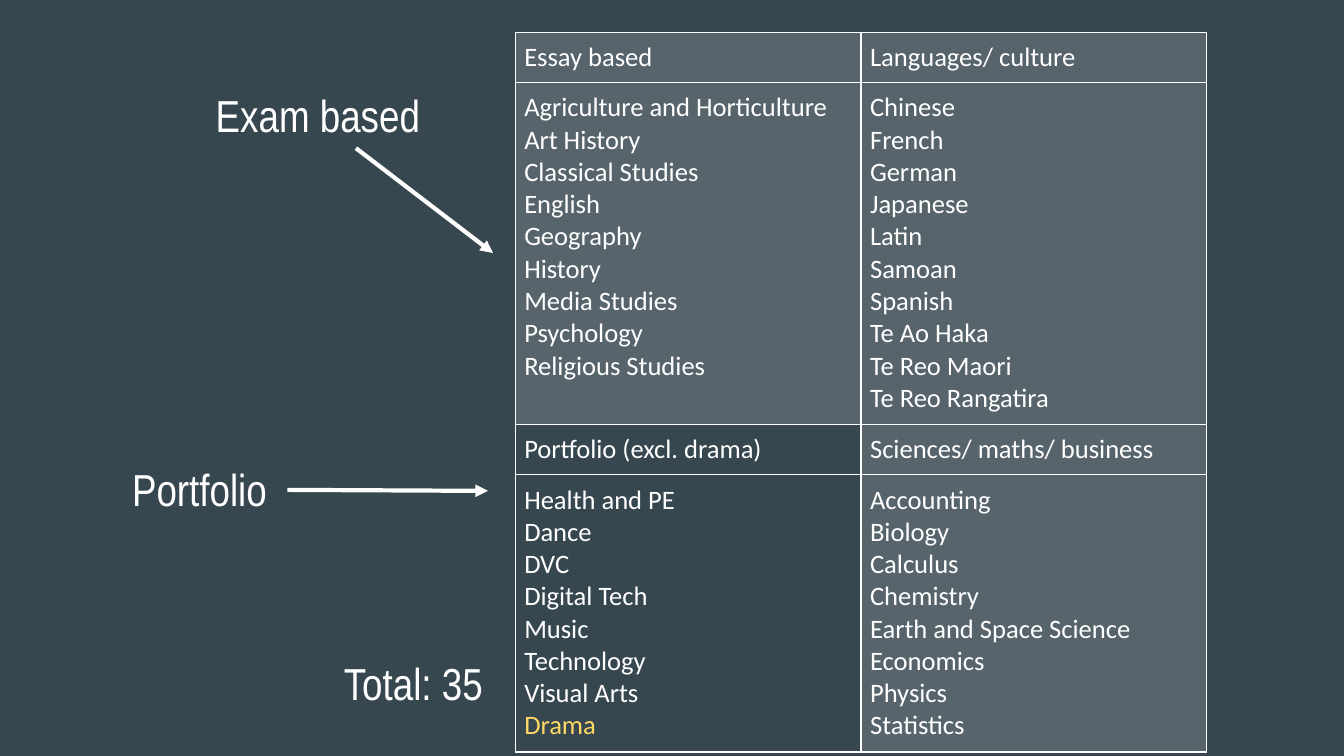
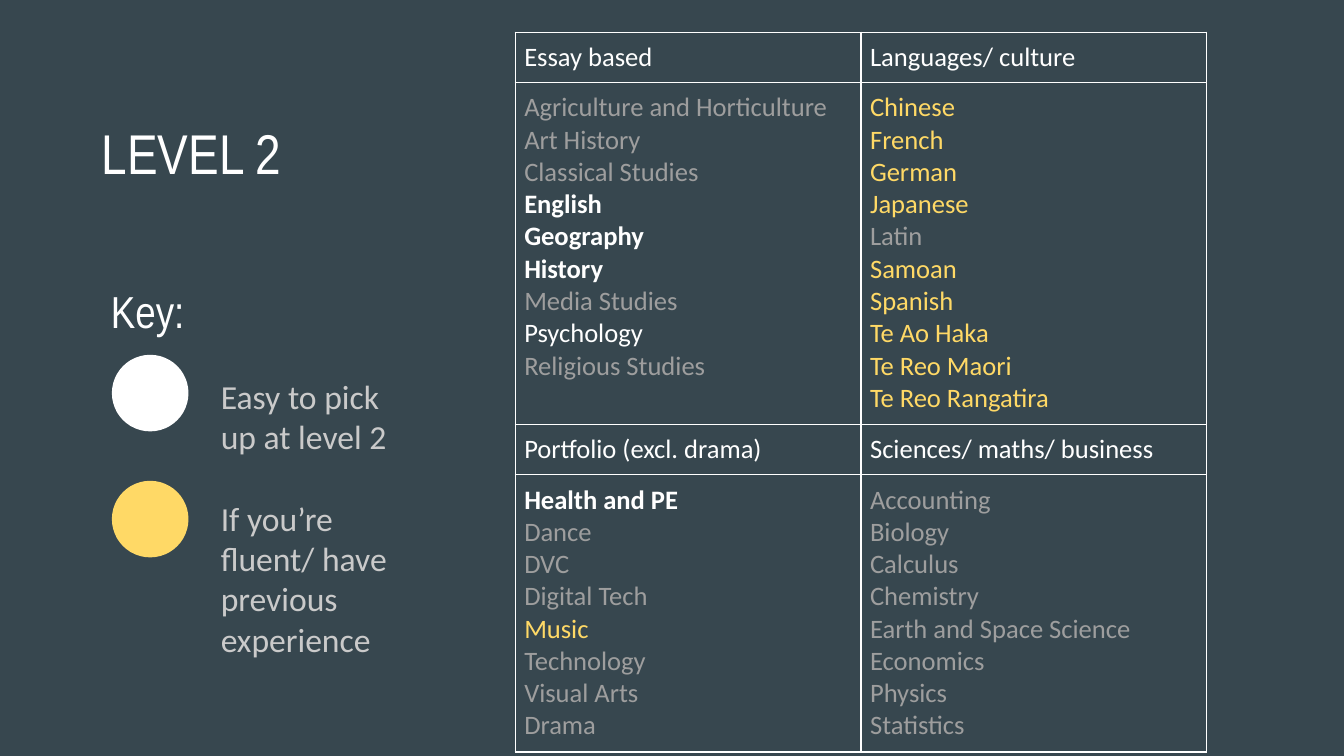
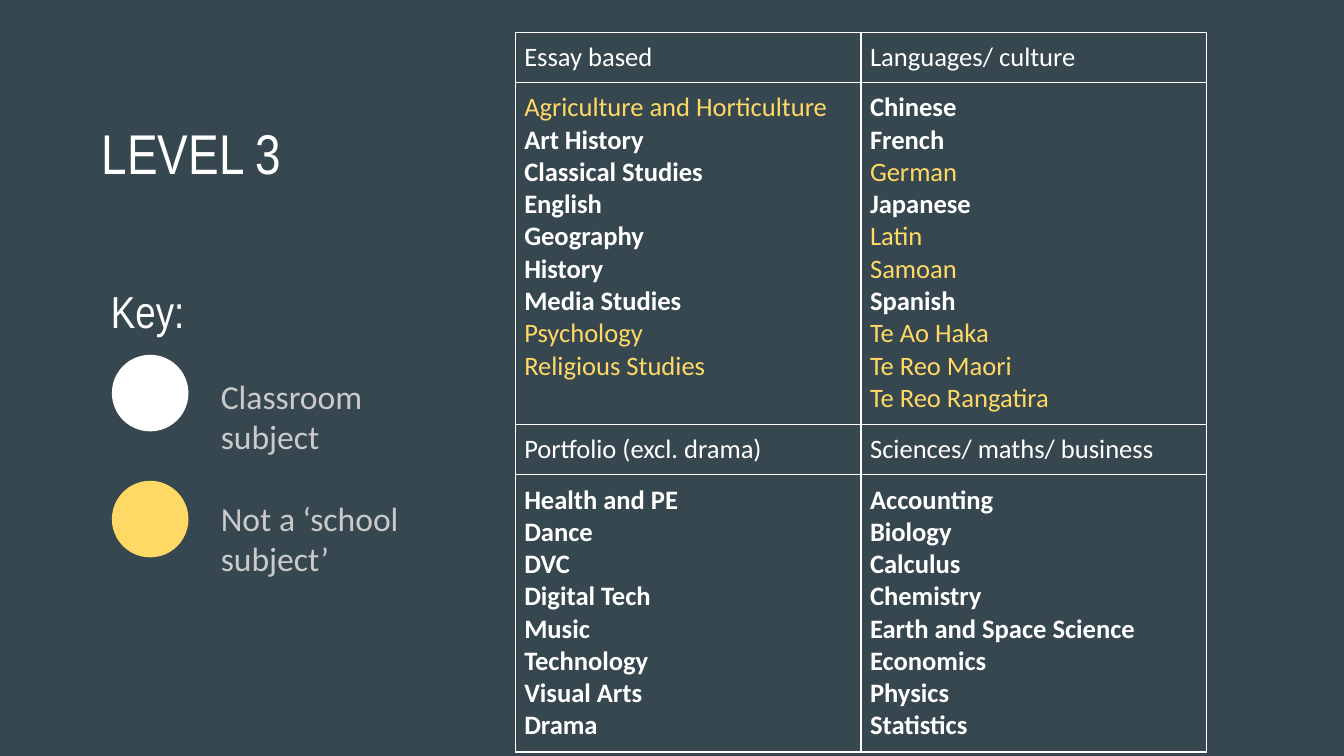
"""Build three slides that sort school subjects by type and level."""
from dataclasses import dataclass, field

from lxml.etree import SubElement
from pptx import Presentation
from pptx.dml.color import RGBColor
from pptx.enum.shapes import MSO_CONNECTOR, MSO_SHAPE
from pptx.oxml.ns import qn
from pptx.util import Inches, Pt

COLORS = {
    "slate": "37474F",
    "white": "FFFFFF",
    "gold": "FFD966",
    "muted": "9E9E9E",
    "caption": "CACACA",
}
HEADING_FONT, BODY_FONT = "Arial Narrow", "Calibri"
HEADING_SIZE, LEVEL_SIZE, SUBJECT_SIZE, KEY_SIZE = 32, 40, 19, 24
KEY_GAP = 29.3
TEXT_INSET, CELL_INSET = 0.13, 0.09
TABLE_LEFT, TABLE_TOP, COLUMN_WIDTH = 5.11, 0.32, 3.43
ROW_HEIGHTS = (0.5, 3.39, 0.5, 2.75)
SHADE_ALPHA = 16
DOT_LEFT, DOT_TOP, DOT_SIZE, DOT_PITCH = 1.11, 3.52, 0.76, 1.25


@dataclass(frozen=True)
class Tone:
    color: str
    bold: bool = False


@dataclass(frozen=True)
class Category:
    row: int
    column: int
    heading: str
    subjects: tuple[str, ...]


@dataclass(frozen=True)
class Heading:
    text: str
    left: float
    top: float
    width: float
    size: int = HEADING_SIZE


@dataclass(frozen=True)
class Arrow:
    start: tuple[float, float]
    end: tuple[float, float]


@dataclass(frozen=True)
class SubjectSlide:
    base: Tone
    headings: tuple[Heading, ...]
    tones: dict[str, Tone] = field(default_factory=dict)
    shaded: tuple[str, ...] = ()
    arrows: tuple[Arrow, ...] = ()
    key: tuple[str, ...] = ()


PLAIN, STRONG = Tone("white"), Tone("white", True)
GOLD, MUTED = Tone("gold"), Tone("muted")

CATEGORIES = (
    Category(0, 0, "Essay based", (
        "Agriculture and Horticulture", "Art History", "Classical Studies",
        "English", "Geography", "History", "Media Studies", "Psychology",
        "Religious Studies")),
    Category(0, 1, "Languages/ culture", (
        "Chinese", "French", "German", "Japanese", "Latin", "Samoan",
        "Spanish", "Te Ao Haka", "Te Reo Maori", "Te Reo Rangatira")),
    Category(2, 0, "Portfolio (excl. drama)", (
        "Health and PE", "Dance", "DVC", "Digital Tech", "Music",
        "Technology", "Visual Arts", "Drama")),
    Category(2, 1, "Sciences/ maths/ business", (
        "Accounting", "Biology", "Calculus", "Chemistry",
        "Earth and Space Science", "Economics", "Physics", "Statistics")),
)


def level_headings(level: int) -> tuple[Heading, ...]:
    """Return the level title and the key heading."""
    return (Heading(f"LEVEL {level}", 0.88, 1.05, 3.48, LEVEL_SIZE),
            Heading("Key:", 0.97, 2.68, 2.59))


SLIDES = (
    SubjectSlide(
        PLAIN,
        (Heading("Total: 35", 3.28, 6.37, 1.72),
         Heading("Exam based", 2.01, 0.74, 2.59),
         Heading("Portfolio", 1.18, 4.45, 1.85)),
        tones={"Drama": GOLD},
        shaded=("Essay based", "Languages/ culture",
                "Sciences/ maths/ business"),
        arrows=(Arrow((3.53, 1.47), (4.89, 2.51)),
                Arrow((2.85, 4.86), (4.84, 4.87))),
    ),
    SubjectSlide(
        MUTED,
        level_headings(2),
        tones={
            **dict.fromkeys(
                ("English", "Geography", "History", "Health and PE"), STRONG),
            **dict.fromkeys(
                ("Chinese", "French", "German", "Japanese", "Samoan",
                 "Spanish", "Te Ao Haka", "Te Reo Maori",
                 "Te Reo Rangatira", "Music"), GOLD),
            "Psychology": PLAIN,
        },
        key=("Easy to pick up at level 2",
             "If you’re fluent/ have previous experience"),
    ),
    SubjectSlide(
        STRONG,
        level_headings(3),
        tones=dict.fromkeys(
            ("Agriculture and Horticulture", "Psychology",
             "Religious Studies", "German", "Latin", "Samoan", "Te Ao Haka",
             "Te Reo Maori", "Te Reo Rangatira"), GOLD),
        key=("Classroom subject", "Not a ‘school subject’"),
    ),
)


def rgb(color: str) -> RGBColor:
    """Look up a named colour."""
    return RGBColor.from_string(COLORS[color])


def write(frame, text: str, *, font: str = BODY_FONT, size: float,
          color: str = "white", bold: bool = False, gap: float = 0) -> None:
    """Add one formatted paragraph to a text frame."""
    paragraph = frame.paragraphs[0] if not frame.text else frame.add_paragraph()
    paragraph.space_before = Pt(gap)
    run = paragraph.add_run()
    run.text = text
    run.font.name, run.font.size, run.font.bold = font, Pt(size), bold
    run.font.color.rgb = rgb(color)


def add_frame(slide, left: float, top: float, width: float, height: float):
    """Add a wrapping text box and return its text frame."""
    frame = slide.shapes.add_textbox(
        Inches(left), Inches(top), Inches(width), Inches(height)).text_frame
    frame.word_wrap = True
    frame.margin_left = frame.margin_right = Inches(TEXT_INSET)
    frame.margin_top = frame.margin_bottom = Inches(TEXT_INSET)
    return frame


def format_cell(cell, shaded: bool) -> None:
    """Give a table cell its insets, white borders and fill."""
    cell.margin_left = cell.margin_right = Inches(CELL_INSET)
    cell.margin_top = cell.margin_bottom = Inches(CELL_INSET)
    properties = cell._tc.get_or_add_tcPr()
    for side in ("lnL", "lnR", "lnT", "lnB"):
        border = SubElement(properties, qn(f"a:{side}"), w=str(Pt(1)))
        paint = SubElement(border, qn("a:solidFill"))
        SubElement(paint, qn("a:srgbClr"), val=COLORS["white"])
    if shaded:
        cell.fill.solid()
        cell.fill.fore_color.rgb = rgb("white")
        tint = properties.find(qn("a:solidFill")).find(qn("a:srgbClr"))
        SubElement(tint, qn("a:alpha"), val=str(SHADE_ALPHA * 1000))
    else:
        cell.fill.background()


def add_subjects(slide, content: SubjectSlide) -> None:
    """Draw the table of subjects, each in its own tone."""
    table = slide.shapes.add_table(
        len(ROW_HEIGHTS), 2, Inches(TABLE_LEFT), Inches(TABLE_TOP),
        Inches(2 * COLUMN_WIDTH), Inches(sum(ROW_HEIGHTS))).table
    table.first_row = table.horz_banding = False
    for column in table.columns:
        column.width = Inches(COLUMN_WIDTH)
    for row, height in zip(table.rows, ROW_HEIGHTS):
        row.height = Inches(height)
    for category in CATEGORIES:
        heading = table.cell(category.row, category.column)
        subjects = table.cell(category.row + 1, category.column)
        for cell in (heading, subjects):
            format_cell(cell, category.heading in content.shaded)
        write(heading.text_frame, category.heading, size=SUBJECT_SIZE)
        for subject in category.subjects:
            tone = content.tones.get(subject, content.base)
            write(subjects.text_frame, subject, size=SUBJECT_SIZE,
                  color=tone.color, bold=tone.bold)


def add_heading(slide, heading: Heading) -> None:
    """Draw one narrow heading."""
    frame = add_frame(slide, heading.left, heading.top, heading.width, 0.81)
    write(frame, heading.text, font=HEADING_FONT, size=heading.size)


def add_arrow(slide, arrow: Arrow) -> None:
    """Draw a white arrow towards the table."""
    pointer = slide.shapes.add_connector(
        MSO_CONNECTOR.STRAIGHT, *map(Inches, arrow.start + arrow.end))
    pointer.line.color.rgb = rgb("white")
    pointer.line.width = Pt(3)
    SubElement(pointer.line._get_or_add_ln(), qn("a:tailEnd"), type="triangle")
    SubElement(pointer._element.spPr, qn("a:effectLst"))


def add_key(slide, meanings: tuple[str, ...]) -> None:
    """Draw the coloured dots and their meanings."""
    frame = add_frame(slide, 2.06, 3.6, 2.15, 3.1)
    for index, (color, meaning) in enumerate(zip(("white", "gold"), meanings)):
        dot = slide.shapes.add_shape(
            MSO_SHAPE.OVAL, Inches(DOT_LEFT),
            Inches(DOT_TOP + index * DOT_PITCH),
            Inches(DOT_SIZE), Inches(DOT_SIZE))
        dot.shadow.inherit = False
        dot.fill.solid()
        dot.fill.fore_color.rgb = rgb(color)
        dot.line.fill.background()
        write(frame, meaning, size=KEY_SIZE, color="caption",
              gap=KEY_GAP * index)


def main() -> None:
    """Build and save the presentation."""
    deck = Presentation()
    deck.slide_width, deck.slide_height = Inches(13.33), Inches(7.5)
    backdrop = deck.slide_master.background.fill
    backdrop.solid()
    backdrop.fore_color.rgb = rgb("slate")
    for content in SLIDES:
        slide = deck.slides.add_slide(deck.slide_layouts[6])
        add_subjects(slide, content)
        for heading in content.headings:
            add_heading(slide, heading)
        for arrow in content.arrows:
            add_arrow(slide, arrow)
        if content.key:
            add_key(slide, content.key)
    deck.save("out.pptx")


if __name__ == "__main__":
    main()
